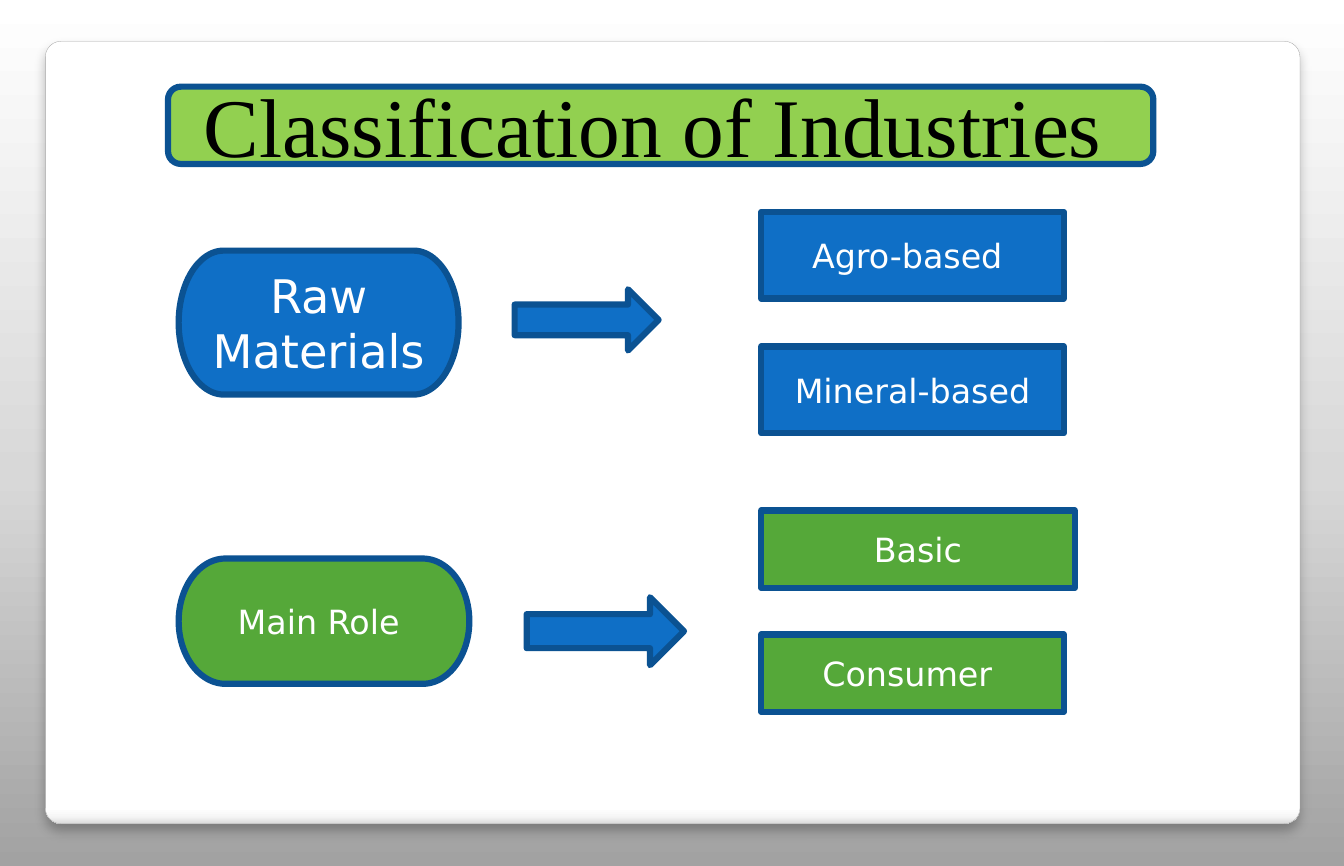
from dataclasses import dataclass

from lxml.etree import SubElement
from pptx import Presentation
from pptx.dml.color import RGBColor
from pptx.enum.shapes import MSO_SHAPE
from pptx.enum.text import MSO_ANCHOR, MSO_AUTO_SIZE, PP_ALIGN
from pptx.oxml.ns import qn
from pptx.shapes.autoshape import Shape
from pptx.slide import Slide
from pptx.util import Emu, Pt

PX = 9144  # 100 px to the inch
PAGE_WIDTH, PAGE_HEIGHT = Emu(9217025), Emu(5940425)  # 25.6 by 16.5 cm
COLORS = {
    "blue": "0F6FC6",
    "green": "55A839",
    "lime": "92D050",
    "border": "0B5292",
    "panel_border": "A4A4A4",
    "white": "FFFFFF",
    "black": "000000",
}
PAGE_STOPS = [(0, "A2A2A2"), (45, "D8D8D8"), (100, "FFFFFF")]
PANEL_STOPS = [(0, "FFFFFF"), (98, "FFFFFF"), (99, "F7F7F7"), (100, "DADADA")]


@dataclass(frozen=True)
class Block:
    kind: MSO_SHAPE
    left: int
    top: int
    width: int
    height: int
    fill: str
    text: str = ""
    size: int = 18


TITLE_PLATE = Block(MSO_SHAPE.FLOWCHART_ALTERNATE_PROCESS, 126, 65, 739, 58, "lime")
BLOCKS = [
    Block(MSO_SHAPE.FLOWCHART_TERMINATOR, 134, 188, 210, 108, "blue", "Raw Materials", 25),
    Block(MSO_SHAPE.RIGHT_ARROW, 386, 217, 108, 46, "blue"),
    Block(MSO_SHAPE.RECTANGLE, 571, 159, 227, 65, "blue", "Agro-based "),
    Block(MSO_SHAPE.RECTANGLE, 571, 260, 227, 65, "blue", "Mineral-based"),
    Block(MSO_SHAPE.FLOWCHART_TERMINATOR, 134, 419, 218, 94, "green", "Main Role "),
    Block(MSO_SHAPE.RIGHT_ARROW, 395, 448, 118, 51, "blue"),
    Block(MSO_SHAPE.RECTANGLE, 571, 383, 235, 58, "green", "Basic"),
    Block(MSO_SHAPE.RECTANGLE, 571, 476, 227, 58, "green", "Consumer "),
]


def px(length: int) -> Emu:
    return Emu(length * PX)


def color(name: str) -> RGBColor:
    return RGBColor.from_string(COLORS[name])


def set_gradient(owner, stops: list[tuple[int, str]], angle: int) -> None:
    """Replace the stops and angle of the first gradient inside an XML element."""
    gradient = owner.find(".//" + qn("a:gradFill"))
    for child in list(gradient):
        gradient.remove(child)
    stop_list = SubElement(gradient, qn("a:gsLst"))
    for percent, value in stops:
        stop = SubElement(stop_list, qn("a:gs"), pos=str(percent * 1000))
        SubElement(stop, qn("a:srgbClr"), val=value)
    SubElement(gradient, qn("a:lin"), ang=str(angle * 60000), scaled="0")


def add_shadow(shape: Shape) -> None:
    shape.shadow.inherit = False
    effects = shape._element.spPr.find(qn("a:effectLst"))
    shadow = SubElement(effects, qn("a:outerShdw"), blurRad=str(Pt(6)),
                        dist=str(Pt(4)), dir=str(90 * 60000), rotWithShape="0")
    shade = SubElement(shadow, qn("a:srgbClr"), val=COLORS["black"])
    SubElement(shade, qn("a:alpha"), val="25000")


def add_panel(page: Slide) -> None:
    panel = page.shapes.add_shape(MSO_SHAPE.ROUNDED_RECTANGLE,
                                  px(34), px(31), px(941), px(587))
    panel.adjustments[0] = 0.02
    panel.fill.gradient()
    set_gradient(panel._element, PANEL_STOPS, 90)
    panel.line.color.rgb = color("panel_border")
    panel.line.width = Pt(0.16)
    add_shadow(panel)


def add_block(page: Slide, block: Block) -> None:
    shape = page.shapes.add_shape(block.kind, px(block.left), px(block.top),
                                  px(block.width), px(block.height))
    shape.shadow.inherit = False
    shape.fill.solid()
    shape.fill.fore_color.rgb = color(block.fill)
    shape.line.color.rgb = color("border")
    shape.line.width = Pt(3.35)
    if block.text:
        frame = shape.text_frame
        frame.word_wrap = True
        frame.vertical_anchor = MSO_ANCHOR.MIDDLE
        para = frame.paragraphs[0]
        para.text = block.text
        para.alignment = PP_ALIGN.CENTER
        para.font.name = "DejaVu Sans"
        para.font.size = Pt(block.size)
        para.font.color.rgb = color("white")


def place_title(page: Slide) -> None:
    """Fill the title placeholder and bring it in front of its plate."""
    title = page.shapes.title
    title.left, title.top, title.width, title.height = px(143), px(50), px(706), px(86)
    frame = title.text_frame
    frame.word_wrap = True
    frame.auto_size = MSO_AUTO_SIZE.NONE
    frame.vertical_anchor = MSO_ANCHOR.MIDDLE
    para = frame.paragraphs[0]
    para.text = "Classification of Industries"
    para.alignment = PP_ALIGN.LEFT
    para.font.name = "Times New Roman"
    para.font.size = Pt(45)
    para.font.color.rgb = color("black")
    page.shapes._spTree.append(title._element)


def main() -> None:
    deck = Presentation()
    deck.slide_width, deck.slide_height = PAGE_WIDTH, PAGE_HEIGHT
    page = deck.slides.add_slide(deck.slide_layouts.get_by_name("Title Only"))
    page.background.fill.gradient()
    set_gradient(page._element, PAGE_STOPS, 270)
    add_panel(page)
    add_block(page, TITLE_PLATE)
    place_title(page)
    for block in BLOCKS:
        add_block(page, block)
    deck.save("out.pptx")


if __name__ == "__main__":
    main()
